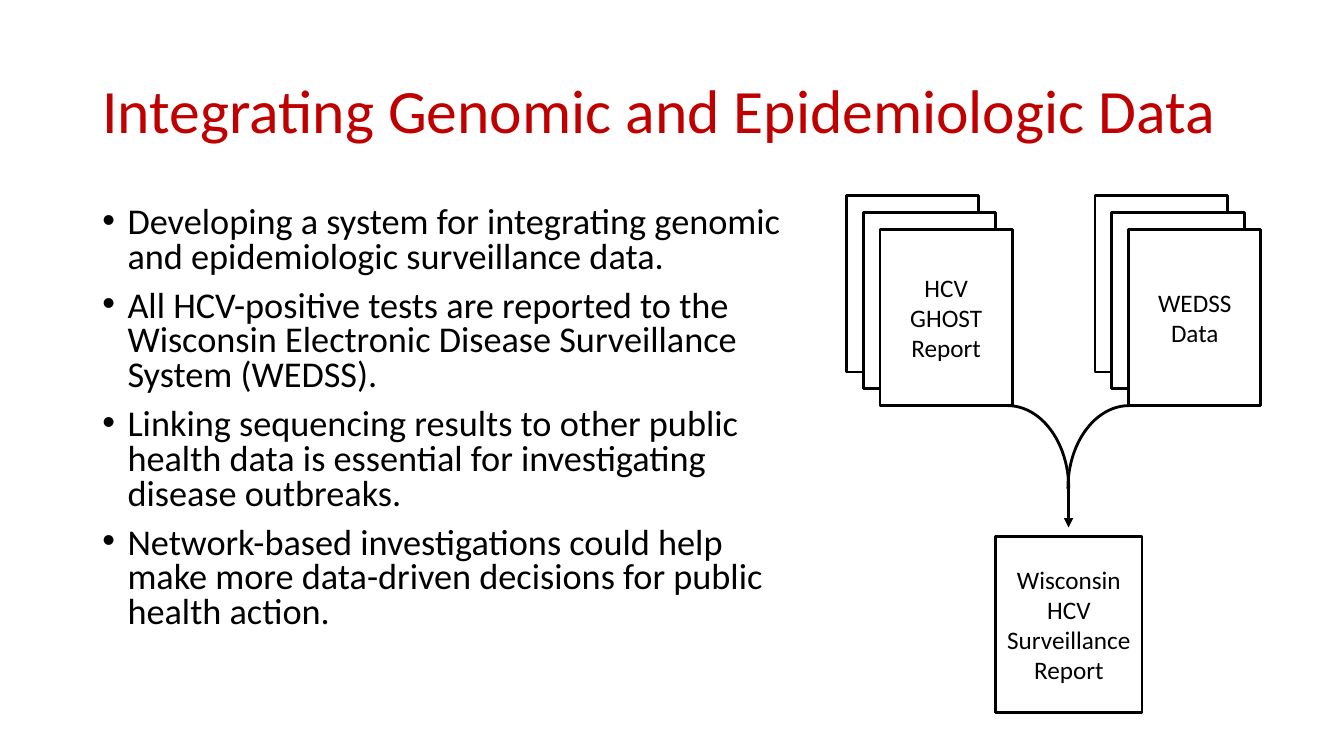
from lxml.etree import SubElement
from pptx import Presentation
from pptx.dml.color import RGBColor
from pptx.enum.shapes import MSO_CONNECTOR, MSO_SHAPE
from pptx.enum.text import MSO_ANCHOR, PP_ALIGN
from pptx.oxml.ns import qn
from pptx.util import Pt

COLORS = {"title": "C00000", "ink": "000000", "paper": "FFFFFF"}


def format_text(p, size, color, align):
    p.alignment = align
    for r in p.runs:
        r.font.name = "Calibri"
        r.font.size = Pt(size)
        r.font.color.rgb = RGBColor.from_string(COLORS[color])


def add_outlined(kind, left, top, width, height, text=""):
    """Add a black-outlined shape, with centred text if there is any."""
    s = slide.shapes.add_shape(kind, Pt(left), Pt(top), Pt(width), Pt(height))
    s.shadow.inherit = False
    s.line.color.rgb = RGBColor.from_string(COLORS["ink"])
    s.line.width = Pt(2)
    if kind == MSO_SHAPE.ARC:
        s.fill.background()
    else:
        s.fill.solid()
        s.fill.fore_color.rgb = RGBColor.from_string(COLORS["paper"])
    if text:
        tf = s.text_frame
        tf.text = text
        tf.word_wrap = True
        tf.vertical_anchor = MSO_ANCHOR.MIDDLE
        format_text(tf.paragraphs[0], 18, "ink", PP_ALIGN.CENTER)
    return s


prs = Presentation()
prs.slide_width, prs.slide_height = Pt(960), Pt(540)
slide = prs.slides.add_slide(prs.slide_layouts[5])

# Title
title = slide.shapes.title
title.left, title.top, title.width, title.height = Pt(66), Pt(28.8), Pt(828), Pt(104.4)
tf = title.text_frame
tf.text = "Integrating Genomic and Epidemiologic Data"
tf.vertical_anchor = MSO_ANCHOR.MIDDLE
tf.paragraphs[0].line_spacing = 0.9
format_text(tf.paragraphs[0], 44, "title", PP_ALIGN.LEFT)

# Bullets
bullets = [
    "Developing a system for integrating genomic and epidemiologic surveillance data.",
    "All HCV-positive tests are reported to the Wisconsin Electronic Disease Surveillance System (WEDSS).",
    "Linking sequencing results to other public health data is essential for investigating disease outbreaks.",
    "Network-based investigations could help make more data-driven decisions for public health action.",
]
body = slide.shapes.add_textbox(Pt(66), Pt(144), Pt(516), Pt(342.7))
tf = body.text_frame
tf.word_wrap = True
tf.text = "\n".join(bullets)
for p in tf.paragraphs:
    p.line_spacing = 0.8
    p.space_before = Pt(10)
    format_text(p, 25.9, "ink", PP_ALIGN.LEFT)
    pPr = p._p.get_or_add_pPr()
    pPr.set("marL", str(Pt(18)))
    pPr.set("indent", str(-Pt(18)))
    SubElement(pPr, qn("a:buFont"), typeface="Arial")
    SubElement(pPr, qn("a:buChar"), char="•")

# Stacks of source documents, three sheets each
SHEET_W, SHEET_H, STEP = 94.5, 126, 12
for stack_left, label in [(604.6, "HCV GHOST Report"), (782.2, "WEDSS Data")]:
    for i in range(3):
        add_outlined(MSO_SHAPE.RECTANGLE, stack_left + i * STEP, 139.7 + i * STEP,
                     SHEET_W, SHEET_H, label if i == 2 else "")

# Combined report
add_outlined(MSO_SHAPE.RECTANGLE, 711.2, 383, 104.6, SHEET_H,
             "Wisconsin HCV Surveillance Report")

# Curves that merge into one arrow
add_outlined(MSO_SHAPE.ARC, 675.9, 289.7, 87.6, 118.8)
right_arc = add_outlined(MSO_SHAPE.ARC, 762.8, 289.7, 87.6, 118.8)
right_arc.element.spPr.xfrm.set("flipH", "1")

arrow = slide.shapes.add_connector(MSO_CONNECTOR.STRAIGHT, Pt(763.3), Pt(348.5), Pt(763.3), Pt(376.8))
arrow.line.color.rgb = RGBColor.from_string(COLORS["ink"])
arrow.line.width = Pt(2.25)
SubElement(arrow.line._get_or_add_ln(), qn("a:tailEnd"), type="triangle")
SubElement(arrow.element.spPr, qn("a:effectLst"))

prs.save("out.pptx")
